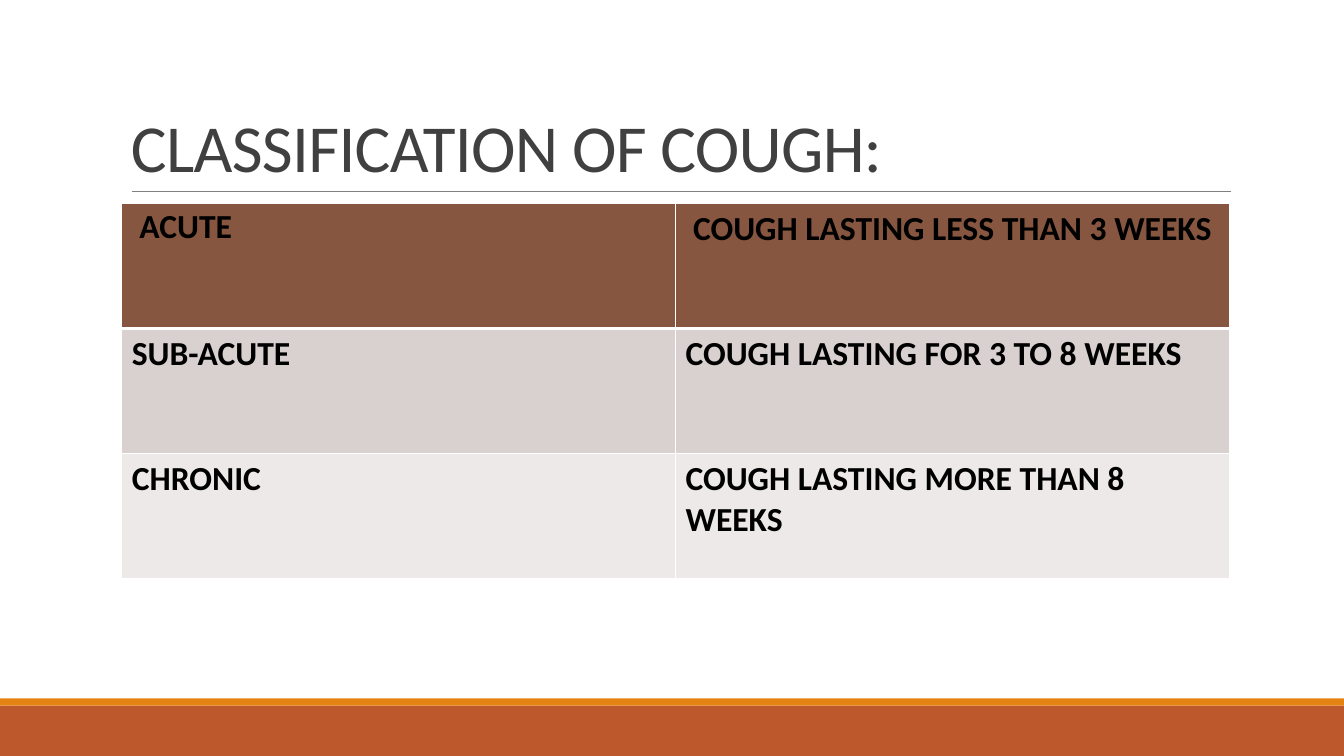
from lxml import etree
from pptx import Presentation
from pptx.dml.color import RGBColor
from pptx.enum.shapes import MSO_CONNECTOR, MSO_SHAPE
from pptx.enum.text import MSO_ANCHOR
from pptx.oxml.ns import qn
from pptx.util import Pt

RECTANGLE = MSO_SHAPE.RECTANGLE
STRAIGHT = MSO_CONNECTOR.STRAIGHT
BOTTOM = MSO_ANCHOR.BOTTOM

COLOURS = {
    "rust": "BD582C", "orange": "E48312", "rule": "808080",
    "title": "404040", "text": "000000", "border": "FFFFFF",
    "header": "865640", "dark band": "D9D1CF", "light band": "EDE9E8",
}
PAGE_WIDTH, PAGE_HEIGHT = 960, 540
COLUMN_WIDTH, ROW_HEIGHT = 395.5, 89.25
ROWS = [
    ("ACUTE", "COUGH LASTING LESS THAN 3 WEEKS"),
    ("SUB-ACUTE", "COUGH LASTING FOR 3 TO 8 WEEKS"),
    ("CHRONIC", "COUGH LASTING MORE THAN 8 WEEKS"),
]
ROW_FILLS = ["header", "dark band", "light band"]


def colour(name):
    """Return the named colour."""
    return RGBColor.from_string(COLOURS[name])


def set_attributes(target, **values):
    """Set each format value on the target."""
    for name, value in values.items():
        setattr(target, name, value)


def write_text(frame, text, size, colour_name, bold=False):
    """Write one paragraph and return it with its span."""
    para = frame.paragraphs[0]
    span = para.add_run()
    span.text = text
    set_attributes(span.font, name="Calibri", size=Pt(size), bold=bold)
    span.font.color.rgb = colour(colour_name)
    return para, span


def add_band(page, top, height, colour_name):
    """Draw a full-width band."""
    band = page.shapes.add_shape(RECTANGLE, 0, Pt(top), Pt(PAGE_WIDTH), Pt(height))
    band.shadow.inherit = False
    band.fill.solid()
    band.fill.fore_color.rgb = colour(colour_name)
    band.line.fill.background()


def add_rule(page, left, right, top):
    """Draw the thin rule under the title."""
    rule = page.shapes.add_connector(STRAIGHT, Pt(left), Pt(top), Pt(right), Pt(top))
    rule.line.width = Pt(0.5)
    rule.line.color.rgb = colour("rule")
    etree.SubElement(rule._element.spPr, qn("a:effectLst"))


def add_title(page, text):
    """Add the slide title, set from the bottom of its box."""
    box = page.shapes.add_textbox(Pt(86.5), Pt(22.5), Pt(792), Pt(114))
    set_attributes(box.text_frame, word_wrap=True, vertical_anchor=BOTTOM)
    para, span = write_text(box.text_frame, text, 48, "title")
    para.line_spacing = 0.85
    span.font._element.set("spc", "-50")


def add_borders(cell, widths):
    """Give a cell white borders of the given widths."""
    properties = cell._tc.get_or_add_tcPr()
    for index, (side, width) in enumerate(widths.items()):
        line = etree.Element(qn(f"a:ln{side}"), w=str(Pt(width)))
        fill = etree.SubElement(line, qn("a:solidFill"))
        etree.SubElement(fill, qn("a:srgbClr"), val=COLOURS["border"])
        properties.insert(index, line)


def add_table(page, left, top):
    """Add the table of cough types and durations."""
    row_count, column_count = len(ROWS), len(ROWS[0])
    table = page.shapes.add_table(
        row_count, column_count, Pt(left), Pt(top),
        Pt(COLUMN_WIDTH * column_count), Pt(ROW_HEIGHT * row_count)).table
    for row_index, texts in enumerate(ROWS):
        is_header = row_index == 0
        for column_index, text in enumerate(texts):
            cell = table.cell(row_index, column_index)
            cell.fill.solid()
            cell.fill.fore_color.rgb = colour(ROW_FILLS[row_index])
            cell.margin_left = Pt(12.6 if is_header else 7.2)
            para, _ = write_text(cell.text_frame, text, 24, "text", bold=True)
            if is_header and column_index == 0:
                para.line_spacing = 0.9
            add_borders(cell, {"L": 1, "R": 1, "T": 3 if row_index == 1 else 1,
                               "B": 3 if is_header else 1})


def main():
    """Build and save the slide."""
    deck = Presentation()
    set_attributes(deck, slide_width=Pt(PAGE_WIDTH), slide_height=Pt(PAGE_HEIGHT))
    page = deck.slides.add_slide(deck.slide_layouts[6])
    add_band(page, 504, 36, "rust")
    add_band(page, 498.75, 5.25, "orange")
    add_rule(page, 94, 879, 136.75)
    add_title(page, "CLASSIFICATION OF COUGH:")
    add_table(page, 87, 145.5)
    deck.save("out.pptx")


if __name__ == "__main__":
    main()
